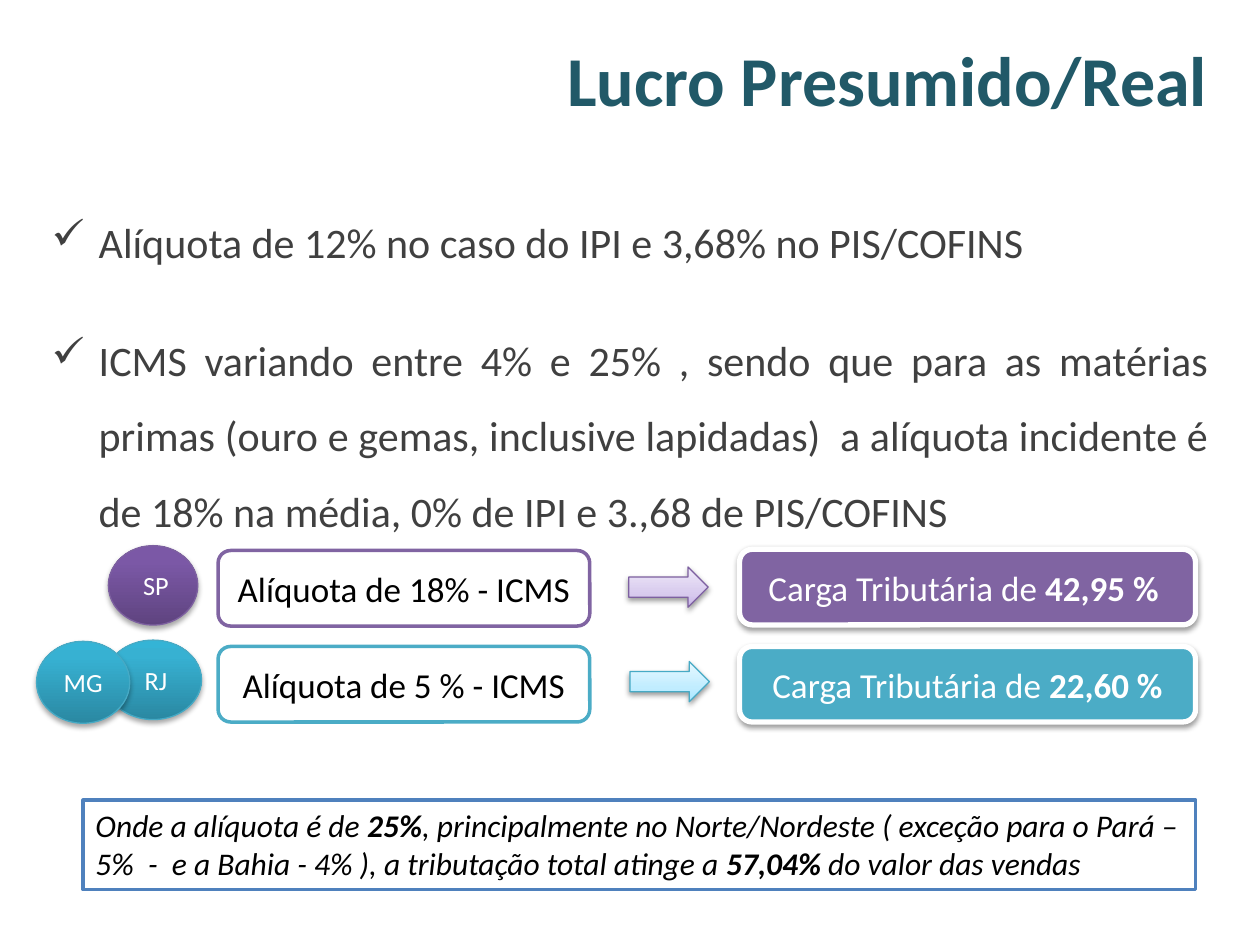
from lxml.etree import SubElement
from pptx import Presentation
from pptx.dml.color import RGBColor
from pptx.enum.shapes import MSO_SHAPE
from pptx.enum.text import MSO_ANCHOR, PP_ALIGN
from pptx.oxml.ns import qn
from pptx.util import Pt

WHITE = RGBColor(0xFF, 0xFF, 0xFF)
BLACK = RGBColor(0x00, 0x00, 0x00)
TITLE_TEAL = RGBColor(0x21, 0x59, 0x68)
BODY_GRAY = RGBColor(0x40, 0x40, 0x40)
NOTE_BLUE = RGBColor(0x4F, 0x81, 0xBD)
PURPLE = RGBColor(0x80, 0x64, 0xA2)
PURPLE_EDGE = RGBColor(0x7D, 0x60, 0xA0)
AQUA = RGBColor(0x4B, 0xAC, 0xC6)
AQUA_EDGE = RGBColor(0x46, 0xAA, 0xC5)

# Gradients run from bottom to top: (position in %, colour)
PURPLE_STATE = [(0, RGBColor(0x5F, 0x44, 0x80)), (80, RGBColor(0x7B, 0x58, 0xA6)),
                (100, RGBColor(0x7C, 0x57, 0xA8))]
AQUA_STATE = [(0, RGBColor(0x2A, 0x88, 0xA2)), (80, RGBColor(0x37, 0xB1, 0xD2)),
              (100, RGBColor(0x34, 0xB4, 0xD6))]
PURPLE_ARROW = [(0, RGBColor(0xC9, 0xB5, 0xE8)), (35, RGBColor(0xD8, 0xCB, 0xEE)),
                (100, RGBColor(0xF0, 0xEA, 0xF9))]
AQUA_ARROW = [(0, RGBColor(0xA7, 0xE6, 0xFF)), (35, RGBColor(0xC1, 0xED, 0xFF)),
              (100, RGBColor(0xE7, 0xF8, 0xFF))]

BULLET_FORMAT = {"alignment": PP_ALIGN.JUSTIFY, "line_spacing": 1.5, "space_after": Pt(12)}
BULLETS = [
    "Alíquota de 12% no caso do IPI e 3,68% no PIS/COFINS",
    "ICMS variando entre 4% e 25% , sendo que para as matérias primas (ouro e gemas, "
    "inclusive lapidadas)  a alíquota incidente é de 18% na média, 0% de IPI e 3.,68 "
    "de PIS/COFINS",
]
NOTE = [
    ("Onde a alíquota é de ", False), ("25%", True),
    (", principalmente no Norte/Nordeste ( exceção para o Pará – 5%  -  e a Bahia - 4% ), "
     "a tributação total atinge a ", False),
    ("57,04%", True), (" do valor das vendas", False),
]

# One row per tax rate; states are (name, left, top, width, height)
ROWS = [
    {"states": [(" SP", 61.9, 311.8, 51.1, 45.4)], "rate": "Alíquota de 18% - ICMS",
     "load": "42,95 % ", "rate_top": 314.6, "load_top": 313.9, "arrow": (359.3, 324),
     "color": PURPLE, "edge": PURPLE_EDGE, "state_fill": PURPLE_STATE,
     "arrow_fill": PURPLE_ARROW},
    {"states": [(" RJ", 59.8, 365.8, 55.4, 45.4), ("MG", 20.9, 366.5, 53.3, 46.8)],
     "rate": "Alíquota de 5 % - ICMS", "load": "22,60 %", "rate_top": 369.4,
     "load_top": 369.4, "arrow": (360, 378), "color": AQUA, "edge": AQUA_EDGE,
     "state_fill": AQUA_STATE, "arrow_fill": AQUA_ARROW},
]


def set_format(target, values):
    for name, value in values.items():
        setattr(target, name, value)


def write_runs(paragraph, runs, size, color, italic=False):
    for text, bold in runs:
        run = paragraph.add_run()
        run.text = text
        set_format(run.font, {"name": "Calibri", "size": Pt(size), "bold": bold,
                              "italic": italic})
        run.font.color.rgb = color


def add_text_box(slide, box):
    frame = slide.shapes.add_textbox(*map(Pt, box)).text_frame
    frame.word_wrap = True
    return frame


def add_color(parent, color):
    return SubElement(parent, qn("a:srgbClr"), val=str(color))


def set_gradient(shape, stops):
    shape.fill.gradient()
    shape.fill.gradient_angle = 90
    stop_list = shape.element.spPr.find(qn("a:gradFill")).find(qn("a:gsLst"))
    for old_stop in list(stop_list):
        stop_list.remove(old_stop)
    for position, color in stops:
        add_color(SubElement(stop_list, qn("a:gs"), pos=str(position * 1000)), color)


def add_shadow(shape, distance, opacity):
    effects = shape.element.spPr.find(qn("a:effectLst"))
    shadow = SubElement(effects, qn("a:outerShdw"), blurRad=str(Pt(3.1)),
                        dist=str(Pt(distance)), dir="5400000", rotWithShape="0")
    SubElement(add_color(shadow, BLACK), qn("a:alpha"), val=str(opacity * 1000))


def add_panel(slide, kind, box, fill, edge, width):
    """Add an outlined shape; fill is one colour or a list of gradient stops."""
    shape = slide.shapes.add_shape(kind, *map(Pt, box))
    shape.shadow.inherit = False
    if isinstance(fill, list):
        set_gradient(shape, fill)
    else:
        shape.fill.solid()
        shape.fill.fore_color.rgb = fill
    shape.line.color.rgb = edge
    shape.line.width = Pt(width)
    return shape


def write_centered(shape, runs, size, color):
    frame = shape.text_frame
    set_format(frame, {"word_wrap": True, "vertical_anchor": MSO_ANCHOR.MIDDLE,
                       "margin_left": Pt(0), "margin_right": Pt(0)})
    frame.paragraphs[0].alignment = PP_ALIGN.CENTER
    write_runs(frame.paragraphs[0], runs, size, color)


def add_title(slide):
    frame = add_text_box(slide, (-11.5, 0, 708.5, 90))
    frame.vertical_anchor = MSO_ANCHOR.MIDDLE
    frame.paragraphs[0].alignment = PP_ALIGN.RIGHT
    write_runs(frame.paragraphs[0], [("Lucro Presumido/Real", True)], 40, TITLE_TEAL)


def add_bullets(slide):
    frame = add_text_box(slide, (22.3, 105.8, 675.4, 413.3))
    for index, text in enumerate(BULLETS):
        paragraph = frame.add_paragraph() if index else frame.paragraphs[0]
        set_format(paragraph, BULLET_FORMAT)
        if index:
            paragraph.space_before = Pt(12)
        properties = paragraph._p.get_or_add_pPr()
        properties.set("marL", str(Pt(27)))
        properties.set("indent", str(Pt(-27)))
        SubElement(properties, qn("a:buFont"), typeface="Wingdings")
        SubElement(properties, qn("a:buChar"), char="ü")
        write_runs(paragraph, [(text, False)], 24, BODY_GRAY)


def add_row(slide, row):
    # States
    for name, *box in row["states"]:
        state = add_panel(slide, MSO_SHAPE.OVAL, box, row["state_fill"], row["edge"], 0.75)
        add_shadow(state, 1.8, 35)
        write_centered(state, [(name, False)], 15, WHITE)
    # Rate
    rate = add_panel(slide, MSO_SHAPE.ROUNDED_RECTANGLE, (124.6, row["rate_top"], 212.4, 43.2),
                     WHITE, row["color"], 2)
    write_centered(rate, [(row["rate"], False)], 20, BLACK)
    # Arrow
    arrow = add_panel(slide, MSO_SHAPE.RIGHT_ARROW, (*row["arrow"], 45.4, 23),
                      row["arrow_fill"], row["edge"], 0.75)
    add_shadow(arrow, 1.6, 38)
    # Tax load
    load = add_panel(slide, MSO_SHAPE.ROUNDED_RECTANGLE, (422.6, row["load_top"], 260.6, 43.2),
                     row["color"], WHITE, 3)
    add_shadow(load, 1.6, 38)
    write_centered(load, [("Carga Tributária de ", False), (row["load"], True)], 20, WHITE)


def add_note(slide):
    note = add_panel(slide, MSO_SHAPE.RECTANGLE, (47.5, 457.2, 635.8, 51.1),
                     WHITE, NOTE_BLUE, 2)
    set_format(note.text_frame, {"word_wrap": True, "vertical_anchor": MSO_ANCHOR.TOP})
    note.text_frame.paragraphs[0].alignment = PP_ALIGN.LEFT
    write_runs(note.text_frame.paragraphs[0], NOTE, 18, BLACK, italic=True)


def main():
    deck = Presentation()
    set_format(deck, {"slide_width": Pt(720), "slide_height": Pt(540)})
    slide = deck.slides.add_slide(deck.slide_layouts[6])
    add_title(slide)
    add_bullets(slide)
    for row in ROWS:
        add_row(slide, row)
    add_note(slide)
    deck.save("out.pptx")


if __name__ == "__main__":
    main()
